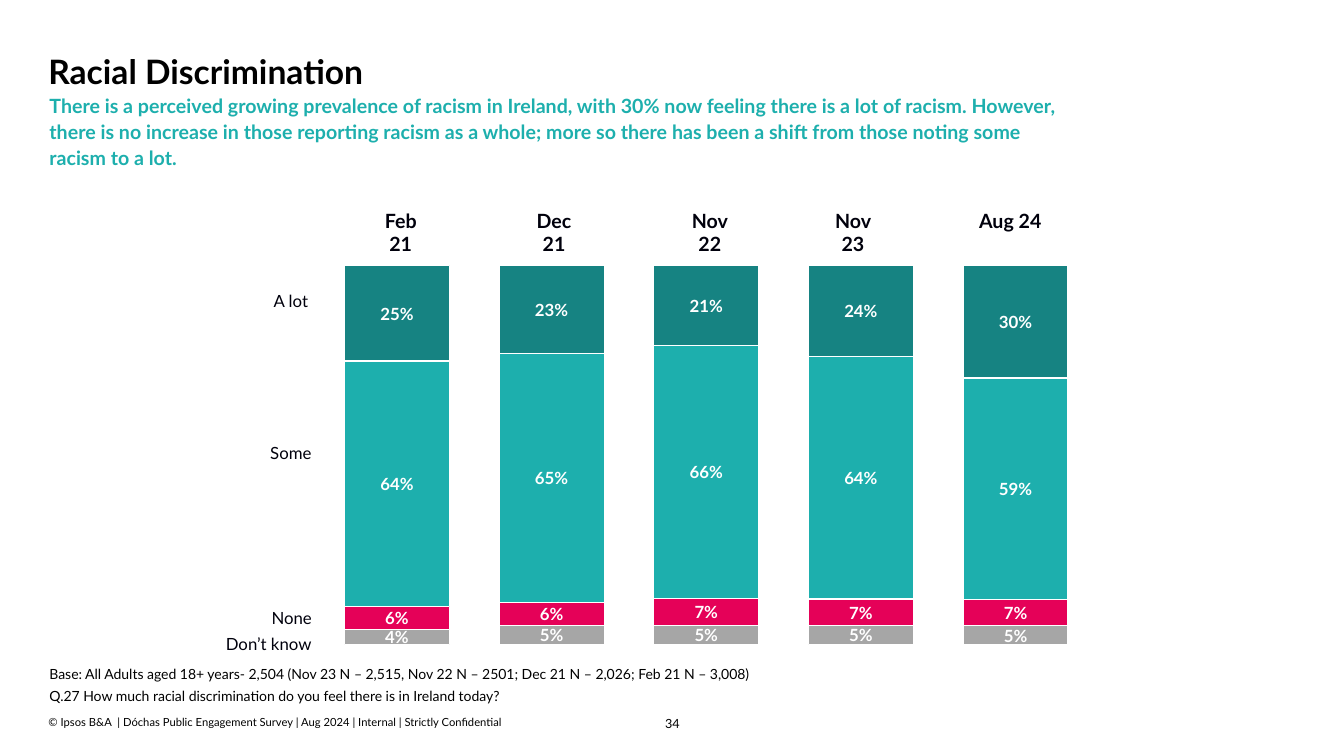
from lxml import etree
from pptx import Presentation
from pptx.chart.data import CategoryChartData
from pptx.dml.color import RGBColor
from pptx.enum.chart import XL_CHART_TYPE, XL_LABEL_POSITION
from pptx.enum.text import MSO_ANCHOR, PP_ALIGN
from pptx.oxml.ns import qn
from pptx.util import Inches, Pt

STACKED = XL_CHART_TYPE.COLUMN_STACKED_100
LABEL_CENTER = XL_LABEL_POSITION.CENTER
LEFT, CENTER = PP_ALIGN.LEFT, PP_ALIGN.CENTER
TOP, BOTTOM = MSO_ANCHOR.TOP, MSO_ANCHOR.BOTTOM

BLACK, INK, WHITE = "000000", "00000C", "FFFFFF"
TEAL = "1DAFAD"

SUMMARY = (
    "There is a perceived growing prevalence of racism in Ireland, with 30% now feeling "
    "there is a lot of racism. However, there is no increase in those reporting racism as a "
    "whole; more so there has been a shift from those noting some racism to a lot."
)
BASE_NOTE = (
    "Base: All Adults aged 18+ years- 2,504 (Nov 23 N – 2,515, Nov 22 N – 2501; "
    "Dec 21 N – 2,026; Feb 21 N – 3,008)\n"
    "Q.27 How much racial discrimination do you feel there is in Ireland today?"
)
COPYRIGHT = (
    "© Ipsos B&A  | Dóchas Public Engagement Survey | Aug 2024 | Internal | "
    "Strictly Confidential"
)
ANSWERS = [
    ("A lot", 2.21, 2.84),
    ("Some", 2.21, 4.34),
    ("None ", 2.24, 5.98),
    ("Don’t know ", 2.01, 6.24),
]
WAVES = [
    ("Feb 21", 3.6, 0.75, True),
    ("Dec 21", 5.12, 0.75, True),
    ("Nov 22", 6.64, 0.8, True),
    ("Nov 23", 8.06, 0.8, True),
    ("Aug 24", 9.61, 0.82, False),
]
SERIES = [
    ("A lot", [25, 23, 21, 24, 30], "168382"),
    ("Some", [64, 65, 66, 64, 59], TEAL),
    ("None", [6, 6, 7, 7, 7], "E50158"),
    ("Don’t know", [4, 5, 5, 5, 5], "A6A6A6"),
]


def color(hex_value):
    return RGBColor.from_string(hex_value)


class SlideBuilder:
    font_name = "Lato"

    def __init__(self, slide):
        self.slide = slide

    def style_font(self, font, size, fill, bold=False):
        font.name = self.font_name
        font.size = Pt(size)
        font.bold = bold
        font.color.rgb = color(fill)

    def text(self, text, left, top, width, height, *, size, fill=BLACK, bold=False,
             align=LEFT, anchor=TOP, spacing=1.0, after=0, inset=(0, 0), wrap=True):
        shape = self.slide.shapes.add_textbox(
            Inches(left), Inches(top), Inches(width), Inches(height))
        frame = shape.text_frame
        frame.word_wrap = wrap
        frame.vertical_anchor = anchor
        frame.margin_left = frame.margin_right = Inches(inset[0])
        frame.margin_top = frame.margin_bottom = Inches(inset[1])
        frame.text = text
        for paragraph in frame.paragraphs:
            paragraph.alignment = align
            paragraph.line_spacing = spacing
            paragraph.space_after = Pt(after)
            for run in paragraph.runs:
                self.style_font(run.font, size, fill, bold)

    def label(self, text, left, top, width, height, **style):
        self.text(text, left, top, width, height, fill=INK, align=CENTER,
                  inset=(0.1, 0.05), **style)

    def stacked_chart(self, categories, series_rows, left, top, width, height):
        data = CategoryChartData(number_format="0")
        data.categories = categories
        for name, values, _ in series_rows:
            data.add_series(name, values)
        chart = self.slide.shapes.add_chart(
            STACKED, Inches(left), Inches(top), Inches(width), Inches(height), data).chart
        self.style_font(chart.font, 12, WHITE, True)
        chart.has_legend = False
        chart.has_title = False
        chart.category_axis.visible = False
        chart.value_axis.visible = False
        chart.value_axis.has_major_gridlines = False
        chart.value_axis.reverse_order = True
        plot = chart.plots[0]
        plot.gap_width = 47
        plot.overlap = 100
        plot.vary_by_categories = False
        for series, (_, _, fill) in zip(plot.series, series_rows):
            series.format.fill.solid()
            series.format.fill.fore_color.rgb = color(fill)
            series.format.line.color.rgb = color(WHITE)
            series.format.line.width = Pt(1)
            labels = series.data_labels
            labels.show_value = True
            labels.position = LABEL_CENTER
            labels.number_format = '#"%"'
            labels.number_format_is_linked = False
            self.style_font(labels.font, 12, WHITE, True)
        self.place_plot(chart, x=0, y=0.03, w=1, h=0.92)

    def place_plot(self, chart, **fractions):
        plot_area = plot_area_of(chart)
        for old_layout in plot_area.findall(qn("c:layout")):
            plot_area.remove(old_layout)
        layout = etree.Element(qn("c:layout"))
        plot_area.insert(0, layout)
        manual = etree.SubElement(layout, qn("c:manualLayout"))
        settings = {"layoutTarget": "inner", "xMode": "edge", "yMode": "edge", **fractions}
        for tag, value in settings.items():
            etree.SubElement(manual, qn(f"c:{tag}")).set("val", str(value))


def plot_area_of(chart):
    return chart.element.find(qn("c:chart")).find(qn("c:plotArea"))


def main():
    presentation = Presentation()
    presentation.slide_width = Inches(13.33)
    presentation.slide_height = Inches(7.5)
    builder = SlideBuilder(presentation.slides.add_slide(presentation.slide_layouts[6]))

    builder.text("34", 6.4, 7.09, 0.54, 0.15, size=9, align=CENTER, spacing=1.1)
    builder.text(COPYRIGHT, 0.48, 7.1, 6.1, 0.13, size=8, anchor=BOTTOM)
    builder.text("Racial Discrimination", 0.48, 0.13, 12.34, 0.78,
                 size=24, bold=True, anchor=BOTTOM, spacing=0.9)
    builder.text(SUMMARY, 0.49, 0.91, 10.22, 0.73,
                 size=14, fill=TEAL, bold=True, spacing=1.1)
    builder.text(BASE_NOTE, 0.49, 6.58, 10.22, 0.62, size=10, spacing=1.15, after=2)

    for answer, left, top in ANSWERS:
        builder.label(answer, left, top, 1.35, 0.3, size=12)
    builder.stacked_chart([wave[0] for wave in WAVES], SERIES, 3.17, 2.51, 7.67, 4.09)
    for wave, left, width, wrap in WAVES:
        builder.label(wave, left, 2.02, width, 0.34, size=14, bold=True, wrap=wrap)

    presentation.save("out.pptx")


if __name__ == "__main__":
    main()
